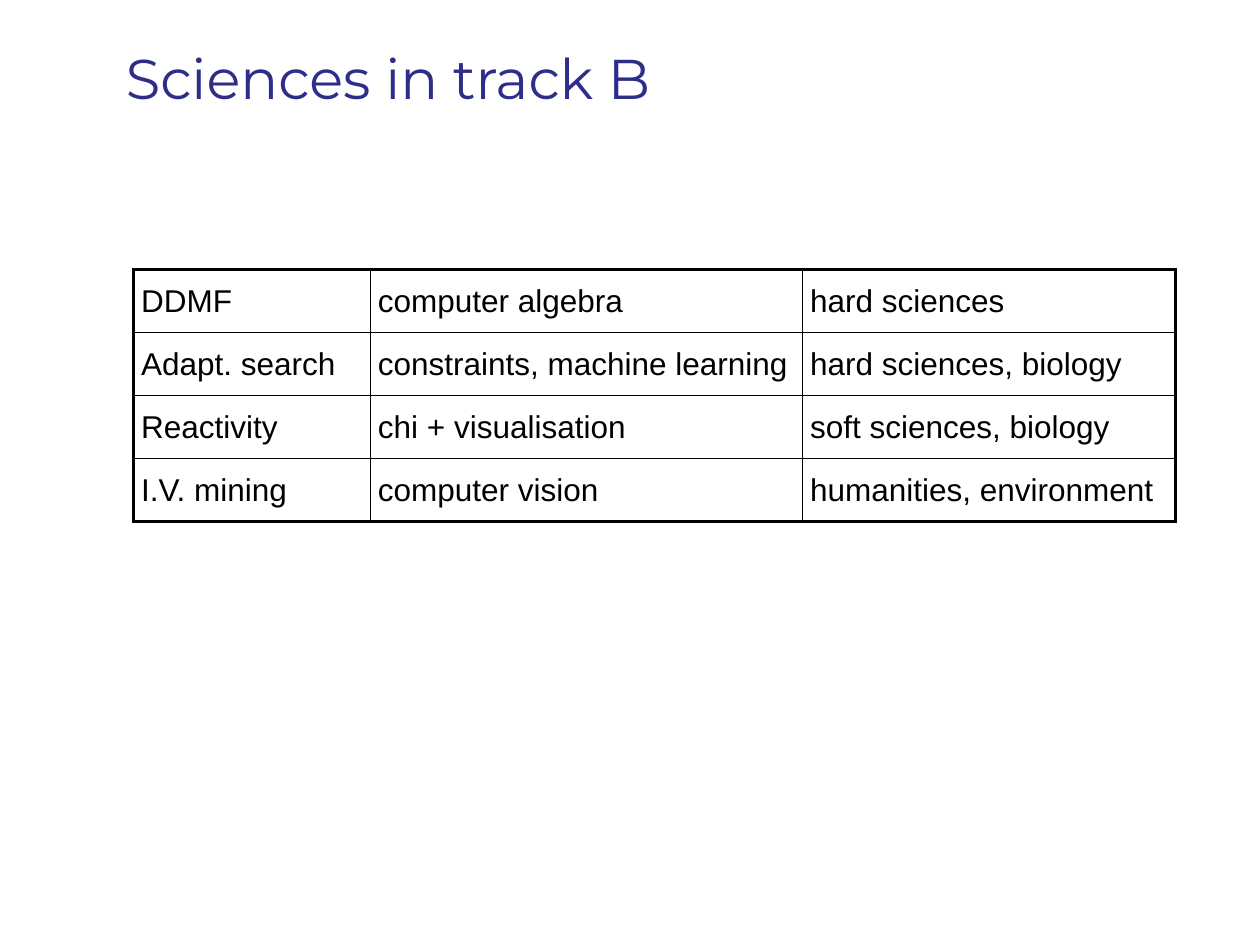
"""Build the slide that lists the sciences covered in track B."""
from pptx import Presentation
from pptx.dml.color import RGBColor as Color
from pptx.enum.text import MSO_ANCHOR as Anchor
from pptx.oxml import parse_xml
from pptx.oxml.ns import nsdecls
from pptx.util import Inches, Pt

THEME = {
    "title": {"name": "Montserrat", "size": Pt(32), "color": "2D2D8A"},
    "cell": {"name": "Arial", "size": Pt(18), "color": "000000"},
    "border": "000000",
    "outer": Pt(2.25),
    "inner": Pt(1),
}
ROWS = [
    ("DDMF", "computer algebra", "hard sciences"),
    ("Adapt. search", "constraints, machine learning", "hard sciences, biology"),
    ("Reactivity", "chi + visualisation", "soft sciences, biology"),
    ("I.V. mining", "computer vision", "humanities, environment"),
]
COLUMN_WIDTHS = [Inches(1.88), Inches(3.43), Inches(2.96)]
ROW_HEIGHT = Inches(0.5)
CELL_FORMAT = {"vertical_anchor": Anchor.MIDDLE} | {
    f"margin_{side}": Inches(0.06) for side in ("left", "right", "top", "bottom")
}
TITLE_FORMAT = {
    "word_wrap": True,
    "vertical_anchor": Anchor.TOP,
    "margin_left": Inches(0.14),
    "margin_right": Inches(0.04),
}


def apply(target, values):
    for name, value in values.items():
        setattr(target, name, value)


def write(para, text, style):
    span = para.add_run()
    span.text = text
    apply(span.font, {"name": style["name"], "size": style["size"]})
    span.font.color.rgb = Color.from_string(style["color"])


deck = Presentation()
apply(deck, {"slide_width": Inches(10), "slide_height": Inches(7.5)})
page = deck.slides.add_slide(deck.slide_layouts[6])

table = page.shapes.add_table(
    len(ROWS), len(COLUMN_WIDTHS), Inches(1.06), Inches(2.14),
    sum(COLUMN_WIDTHS), ROW_HEIGHT * len(ROWS),
).table
apply(table, {"first_row": False, "horz_banding": False})
for column, width in zip(table.columns, COLUMN_WIDTHS):
    column.width = width

for r, texts in enumerate(ROWS):
    table.rows[r].height = ROW_HEIGHT
    for c, text in enumerate(texts):
        cell = table.cell(r, c)
        apply(cell, CELL_FORMAT)
        cell.fill.background()
        write(cell.text_frame.paragraphs[0], text, THEME["cell"])
        on_edge = {
            "L": c == 0,
            "R": c == len(texts) - 1,
            "T": r == 0,
            "B": r == len(ROWS) - 1,
        }
        for place, (side, is_outer) in enumerate(on_edge.items()):
            weight = THEME["outer" if is_outer else "inner"]
            line = parse_xml(
                f'<a:ln{side} {nsdecls("a")} w="{weight}"><a:solidFill>'
                f'<a:srgbClr val="{THEME["border"]}"/></a:solidFill></a:ln{side}>'
            )
            cell._tc.get_or_add_tcPr().insert(place, line)

box = page.shapes.add_textbox(Inches(0.86), Inches(0.3), Inches(8.64), Inches(1.17))
apply(box.text_frame, TITLE_FORMAT)
write(box.text_frame.paragraphs[0], "Sciences in track B", THEME["title"])

deck.save("out.pptx")
